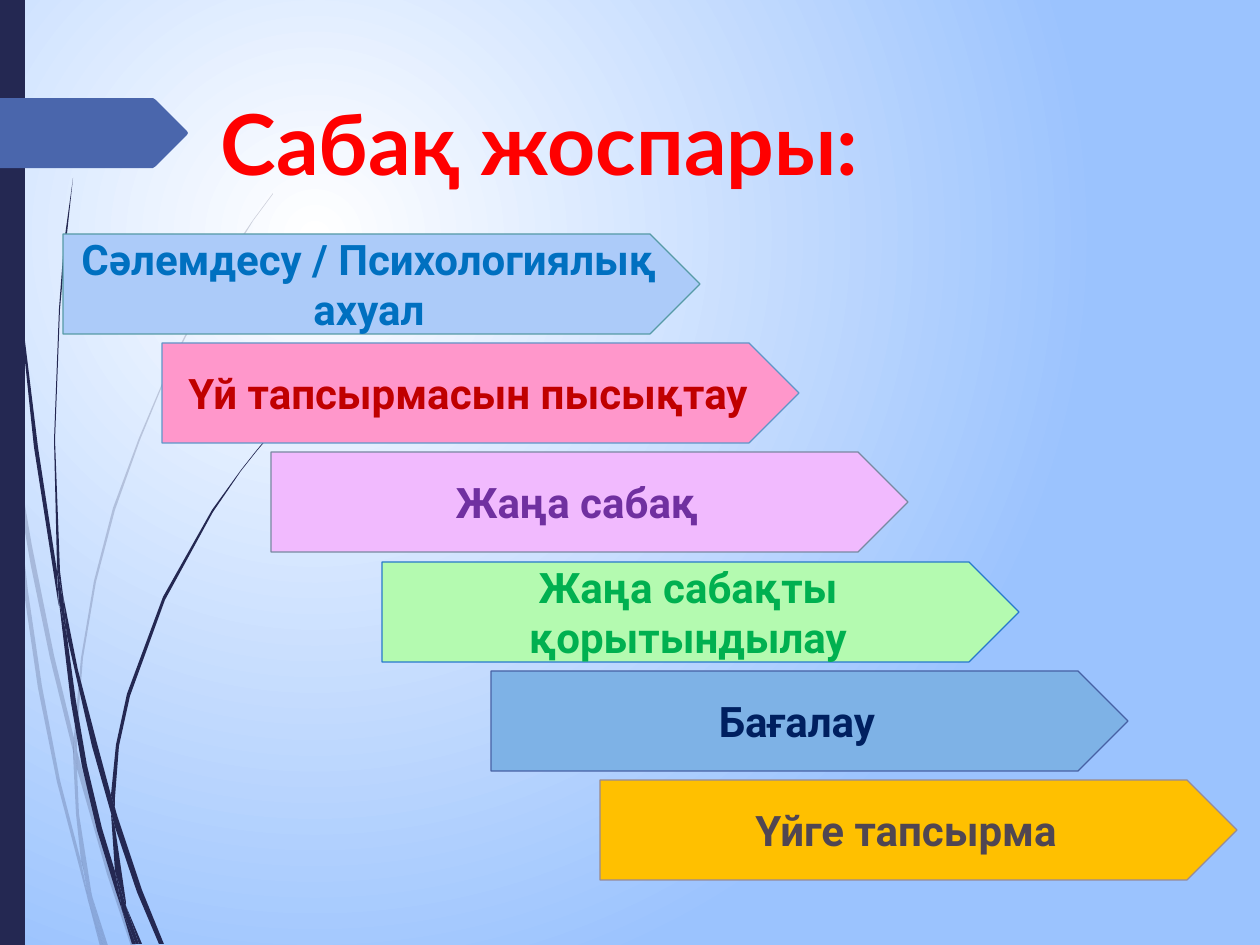
from dataclasses import dataclass

from lxml import etree
from pptx import Presentation
from pptx import util as u
from pptx.dml.color import RGBColor
from pptx.enum import shapes, text
from pptx.oxml import ns, parse_xml

EMU_PER_PX = 914400 / 126
SLIDE_W, SLIDE_H = 1260, 945


@dataclass(frozen=True)
class Theme:
    navy: str = "242852"
    tag: str = "4A66AC"
    glow: str = "FFFFFF"
    sky: str = "9BC3FE"
    title: str = "FF0000"
    title_font: str = "Lato"
    title_size: int = 48
    step_font: str = "Roboto"
    step_size: int = 24
    step_line: float = 0.75
    faint_alpha: int = 20


@dataclass(frozen=True)
class Step:
    label: str
    left: int
    fill: str
    line: str
    ink: str


THEME = Theme()

STEP_TOP, STEP_SPAN, STEP_W, STEP_H = 234, 546, 637, 100
STEPS = (
    Step("Сәлемдесу / Психологиялық ахуал", 63, "ACCBF9", "569BA6", "0070C0"),
    Step("Үй тапсырмасын пысықтау", 162, "FF97CB", "5E96C8", "C00000"),
    Step("Жаңа сабақ", 271, "F1BAFE", "7989A1", "7030A0"),
    Step("Жаңа сабақты қорытындылау", 382, "B4FAB0", "2779CB", "00B050"),
    Step("Бағалау", 491, "7EB2E6", "4761A4", "002060"),
    Step("Үйге тапсырма", 600, "FFC000", "968A99", "504652"),
)

FAINT_BLADES = (
    ((10, 441), (8, 406), (0, 355), (0, 377), (9, 433)),
    ((50, 658), (74, 755), (74, 738), (54, 655), (32, 546), (13, 435),
     (15, 474), (31, 566)),
    ((81, 765), (77, 751), (77, 769), (107, 874), (131, 946), (136, 946), (111, 872)),
    ((105, 946), (108, 946), (92, 896)),
    ((81, 861), (60, 780), (42, 686), (28, 591), (15, 474), (10, 441), (24, 592),
     (38, 688), (57, 782), (81, 873), (88, 900), (87, 891)),
    ((73, 755), (76, 814), (81, 861), (84, 872), (92, 896), (91, 890), (79, 814),
     (77, 769), (77, 766)),
    ((77, 736), (83, 658), (96, 582), (115, 510), (140, 440), (168, 372), (200, 309),
     (236, 249), (253, 221), (273, 194), (273, 193), (253, 220), (234, 248),
     (199, 307), (167, 372), (139, 438), (113, 508), (94, 581), (81, 658),
     (74, 736), (74, 738), (77, 751)),
    ((88, 900), (100, 946), (103, 946)),
    ((77, 766), (77, 769), (77, 751), (74, 738), (73, 755)),
    ((84, 872), (82, 861), (87, 891), (88, 900), (103, 946), (105, 946), (92, 896)),
)
DARK_BLADES = (
    ((6, 139), (18, 294), (34, 447), (58, 601), (59, 606), (57, 576), (57, 571),
     (38, 447), (19, 292), (8, 137), (5, 60), (4, 0), (3, 0), (4, 60)),
    ((92, 746), (111, 813), (111, 798), (111, 795), (97, 743), (78, 670), (63, 595),
     (67, 636)),
    ((118, 818), (115, 808), (115, 827), (137, 892), (159, 944), (164, 944), (142, 890)),
    ((115, 871), (102, 828), (87, 765), (76, 701), (67, 636), (59, 601), (71, 702),
     (82, 766), (97, 830), (116, 892), (122, 910), (121, 903)),
    ((63, 595), (60, 571), (55, 440), (60, 309), (66, 243), (73, 178), (64, 243),
     (59, 309), (54, 440), (57, 566), (62, 595)),
    ((139, 944), (142, 944), (126, 906)),
    ((59, 601), (67, 636), (63, 595), (62, 595), (57, 566), (57, 571)),
    ((115, 798), (119, 746), (130, 696), (165, 600), (213, 512), (241, 471),
     (256, 452), (272, 433), (271, 433), (256, 451), (241, 470), (212, 510),
     (163, 597), (127, 694), (116, 745), (111, 795), (115, 808)),
    ((122, 910), (132, 944), (136, 944)),
    ((111, 813), (115, 871), (121, 890), (126, 906), (126, 902), (115, 827), (113, 820)),
    ((111, 813), (113, 820), (115, 827), (115, 808), (111, 795), (111, 798)),
    ((121, 890), (115, 871), (121, 903), (122, 910), (136, 944), (139, 944), (126, 906)),
)
TAG = ((0, 98), (153, 98), (156, 100), (187, 131), (188, 133), (187, 135),
       (156, 166), (153, 168), (0, 168))


def px(n: int) -> u.Emu:
    return u.Emu(round(n * EMU_PER_PX))


def rgb(color: str) -> RGBColor:
    return RGBColor.from_string(color)


def paint(sp, color: str, line: str | None = None) -> None:
    sp.shadow.inherit = False
    sp.fill.solid()
    sp.fill.fore_color.rgb = rgb(color)
    if line:
        sp.line.color.rgb = rgb(line)
        sp.line.width = u.Pt(THEME.step_line)
    else:
        sp.line.fill.background()


def style_run(p, font: str, size: int, color: str) -> None:
    f = p.runs[0].font
    f.name, f.size, f.bold = font, u.Pt(size), True
    f.color.rgb = rgb(color)


def set_background(s) -> None:
    """Radial glow centred a quarter of the way in from the top left."""
    bg = parse_xml(
        f'<p:bg {ns.nsdecls("p", "a")}><p:bgPr><a:gradFill><a:gsLst>'
        f'<a:gs pos="0"><a:srgbClr val="{THEME.glow}"/></a:gs>'
        f'<a:gs pos="100000"><a:srgbClr val="{THEME.sky}"/></a:gs></a:gsLst>'
        '<a:path path="circle"><a:fillToRect l="50000" t="50000" r="100000" b="100000"/>'
        '</a:path></a:gradFill><a:effectLst/></p:bgPr></p:bg>')
    s.element.find(ns.qn("p:cSld")).insert(0, bg)


def add_outline(s, points: tuple, color: str, alpha: int = 100) -> None:
    corners = [(px(x), px(y)) for x, y in points]
    builder = s.shapes.build_freeform(*corners[0])
    builder.add_line_segments(corners[1:])
    sp = builder.convert_to_shape()
    paint(sp, color)
    if alpha < 100:
        clr = sp.element.spPr.find(f'{ns.qn("a:solidFill")}/{ns.qn("a:srgbClr")}')
        etree.SubElement(clr, ns.qn("a:alpha"), val=str(alpha * 1000))


def add_step(s, step: Step, top: int) -> None:
    sp = s.shapes.add_shape(shapes.MSO_SHAPE.PENTAGON, px(step.left), px(top),
                            px(STEP_W), px(STEP_H))
    paint(sp, step.fill, step.line)
    tf = sp.text_frame
    tf.text = step.label
    tf.word_wrap = True
    tf.vertical_anchor = text.MSO_ANCHOR.MIDDLE
    p = tf.paragraphs[0]
    p.alignment = text.PP_ALIGN.CENTER
    style_run(p, THEME.step_font, THEME.step_size, step.ink)


def set_title(s, label: str) -> None:
    title = s.shapes.title
    title.left, title.top, title.width, title.height = map(px, (208, 85, 785, 157))
    tf = title.text_frame
    tf.text = label
    tf.word_wrap = True
    tf.auto_size = text.MSO_AUTO_SIZE.NONE
    tf.vertical_anchor = text.MSO_ANCHOR.TOP
    p = tf.paragraphs[0]
    p.alignment = text.PP_ALIGN.LEFT
    style_run(p, THEME.title_font, THEME.title_size, THEME.title)


def main() -> None:
    prs = Presentation()
    prs.slide_width, prs.slide_height = px(SLIDE_W), px(SLIDE_H)
    s = prs.slides.add_slide(prs.slide_layouts[5])
    set_background(s)
    set_title(s, "Сабақ жоспары:")
    for blade in FAINT_BLADES:
        add_outline(s, blade, THEME.navy, THEME.faint_alpha)
    for blade in DARK_BLADES:
        add_outline(s, blade, THEME.navy)
    bar = s.shapes.add_shape(shapes.MSO_SHAPE.RECTANGLE, 0, 0, px(25), px(SLIDE_H))
    paint(bar, THEME.navy)
    add_outline(s, TAG, THEME.tag)
    for i, step in enumerate(STEPS):
        add_step(s, step, STEP_TOP + round(i * STEP_SPAN / (len(STEPS) - 1)))
    prs.save("out.pptx")


if __name__ == "__main__":
    main()
